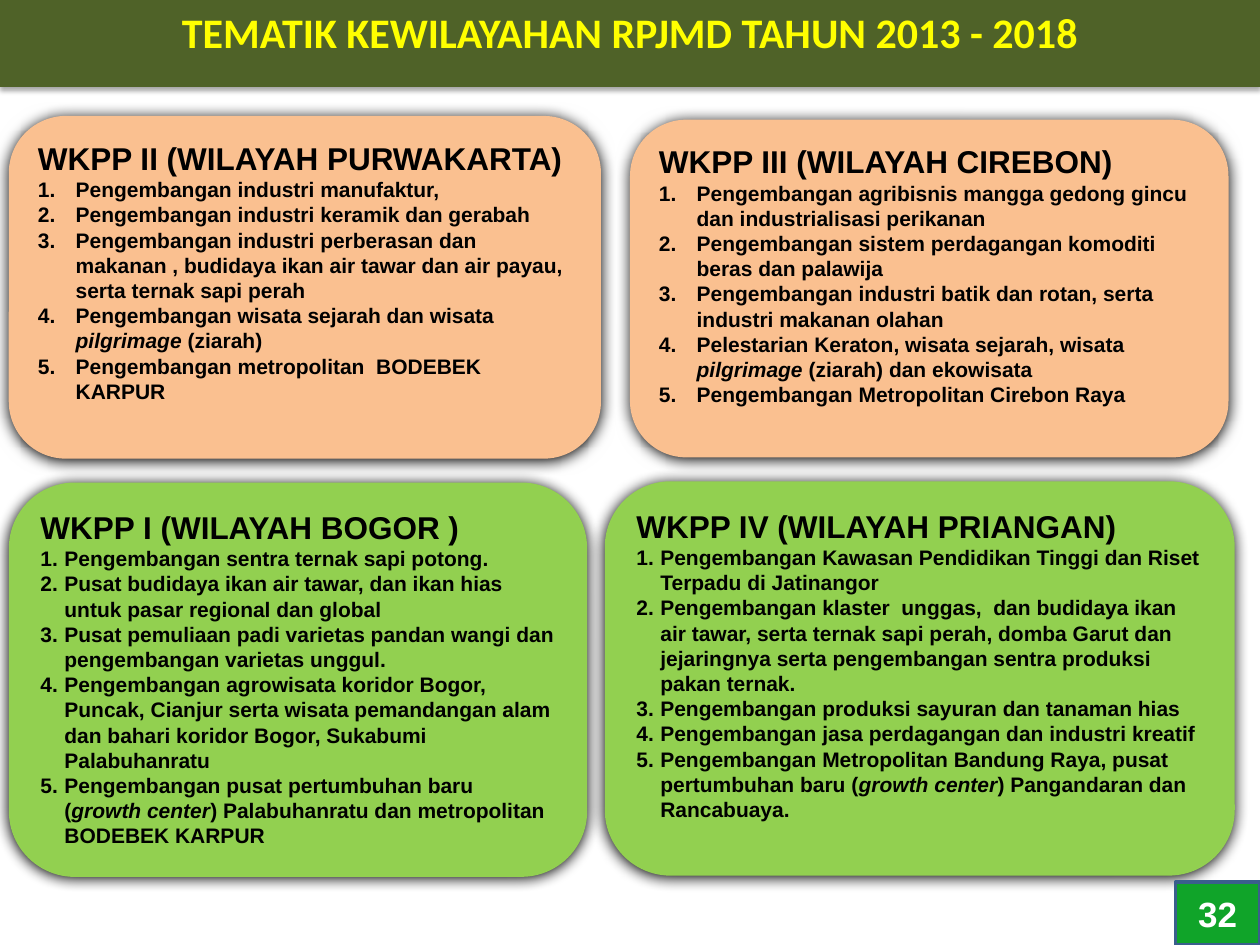
from lxml import etree
from pptx import Presentation
from pptx.dml.color import RGBColor
from pptx.enum.shapes import MSO_SHAPE as Shape
from pptx.enum.text import MSO_ANCHOR as Anchor, MSO_AUTO_SIZE as AutoSize, PP_ALIGN as Align
from pptx.oxml.ns import qn
from pptx.util import Inches, Pt

ORANGE, GREEN = "FAC090", "92D050"

REGIONS = [
    ("WKPP II (WILAYAH PURWAKARTA)", (0.07, 0.92, 4.7, 2.72), ORANGE, 0.3, [
        "Pengembangan industri manufaktur,",
        "Pengembangan industri keramik dan gerabah",
        "Pengembangan industri perberasan dan makanan , budidaya ikan air tawar "
        "dan air payau, serta ternak sapi perah",
        "Pengembangan wisata sejarah dan wisata *pilgrimage *(ziarah)",
        "Pengembangan metropolitan  BODEBEK KARPUR",
    ]),
    ("WKPP III (WILAYAH CIREBON)", (5, 0.95, 4.75, 2.68), ORANGE, 0.3, [
        "Pengembangan agribisnis mangga gedong gincu dan industrialisasi perikanan",
        "Pengembangan sistem perdagangan komoditi  beras dan palawija",
        "Pengembangan industri batik dan rotan, serta industri makanan olahan",
        "Pelestarian Keraton, wisata sejarah, wisata *pilgrimage *(ziarah) dan ekowisata",
        "Pengembangan Metropolitan Cirebon Raya",
    ]),
    ("WKPP IV (WILAYAH PRIANGAN)", (4.8, 3.82, 5, 3.13), GREEN, 0.19, [
        "Pengembangan Kawasan Pendidikan Tinggi dan Riset Terpadu di Jatinangor",
        "Pengembangan klaster  unggas,  dan budidaya ikan air tawar, serta ternak sapi perah, "
        "domba Garut dan jejaringnya serta pengembangan sentra produksi pakan ternak.",
        "Pengembangan produksi sayuran dan tanaman hias",
        "Pengembangan jasa perdagangan dan industri kreatif",
        "Pengembangan Metropolitan Bandung Raya, pusat pertumbuhan baru "
        "(*growth center*) Pangandaran dan Rancabuaya.",
    ]),
    ("WKPP I (WILAYAH BOGOR )", (0.07, 3.83, 4.59, 3.13), GREEN, 0.19, [
        "Pengembangan sentra ternak sapi potong.",
        "Pusat budidaya ikan air tawar, dan ikan hias untuk pasar regional dan global",
        "Pusat pemuliaan padi varietas pandan wangi dan pengembangan varietas unggul.",
        "Pengembangan agrowisata koridor Bogor, Puncak, Cianjur serta wisata pemandangan alam "
        "dan bahari koridor Bogor, Sukabumi Palabuhanratu",
        "Pengembangan pusat pertumbuhan baru (*growth center*) Palabuhanratu "
        "dan metropolitan  BODEBEK KARPUR",
    ]),
]


def paint(fill, color):
    fill.solid()
    fill.fore_color.rgb = RGBColor.from_string(color)


def set_font(para, name, size, color):
    font = para.font
    font.name, font.size, font.bold = name, Pt(size), True
    font.color.rgb = RGBColor.from_string(color)


def add_shadow(shape, blur, distance, opacity):
    shape.shadow.inherit = False
    effects = shape._element.spPr.find(qn("a:effectLst"))
    shadow = etree.SubElement(effects, qn("a:outerShdw"), blurRad=str(Pt(blur)),
                              dist=str(Pt(distance)), dir="5400000", algn="ctr", rotWithShape="0")
    color = etree.SubElement(shadow, qn("a:srgbClr"), val="000000")
    etree.SubElement(color, qn("a:alpha"), val=str(opacity * 1000))


def add_box(page, kind, place, color):
    box = page.shapes.add_shape(kind, *map(Inches, place))
    box.shadow.inherit = False
    paint(box.fill, color)
    box.line.fill.background()
    box.text_frame.word_wrap = True
    return box


def number_para(para, indent):
    props = para._p.get_or_add_pPr()
    props.set("marL", str(Inches(indent)))
    props.set("indent", str(-Inches(indent)))
    etree.SubElement(props, qn("a:buFont"), typeface="+mj-lt")
    etree.SubElement(props, qn("a:buAutoNum"), type="arabicPeriod")


def add_item(frame, text, indent):
    para = frame.add_paragraph()
    para.alignment = Align.LEFT
    number_para(para, indent)
    set_font(para, "Arial", 12, "000000")
    for position, part in enumerate(text.split("*")):
        span = para.add_run()
        span.text = part
        if position % 2:
            span.font.italic = True


def add_region(page, heading, place, color, indent, items):
    box = add_box(page, Shape.ROUNDED_RECTANGLE, place, color)
    add_shadow(box, 8.5, 1, 100)
    frame = box.text_frame
    frame.vertical_anchor = Anchor.TOP
    para = frame.paragraphs[0]
    para.text = heading
    para.alignment = Align.LEFT
    set_font(para, "Arial", 18, "000000")
    for item in items:
        add_item(frame, item, indent)


def add_title(page, text):
    title = page.shapes.title
    title.left, title.top, title.width, title.height = map(Inches, (0, 0, 10, 0.69))
    paint(title.fill, "4F6228")
    add_shadow(title, 3.1, 1.8, 35)
    frame = title.text_frame
    frame.auto_size = AutoSize.NONE
    frame.vertical_anchor = Anchor.TOP
    para = frame.paragraphs[0]
    para.text = text
    para.alignment = Align.CENTER
    set_font(para, "Calibri", 24, "FFFF00")


def add_page_number(page, number):
    box = add_box(page, Shape.RECTANGLE, (9.33, 7, 0.67, 0.5), "10A429")
    paint(box.line.fill, "3A5F8C")
    box.line.width = Pt(2)
    box.text_frame.vertical_anchor = Anchor.MIDDLE
    para = box.text_frame.paragraphs[0]
    para.text = number
    para.alignment = Align.CENTER
    set_font(para, "Arial", 20, "FFFFFF")


def main():
    deck = Presentation()
    deck.slide_width, deck.slide_height = Inches(10), Inches(7.5)
    page = deck.slides.add_slide(deck.slide_layouts[5])
    for region in REGIONS:
        add_region(page, *region)
    add_title(page, "TEMATIK KEWILAYAHAN RPJMD TAHUN 2013 - 2018")
    add_page_number(page, "32")
    deck.save("out.pptx")


if __name__ == "__main__":
    main()
